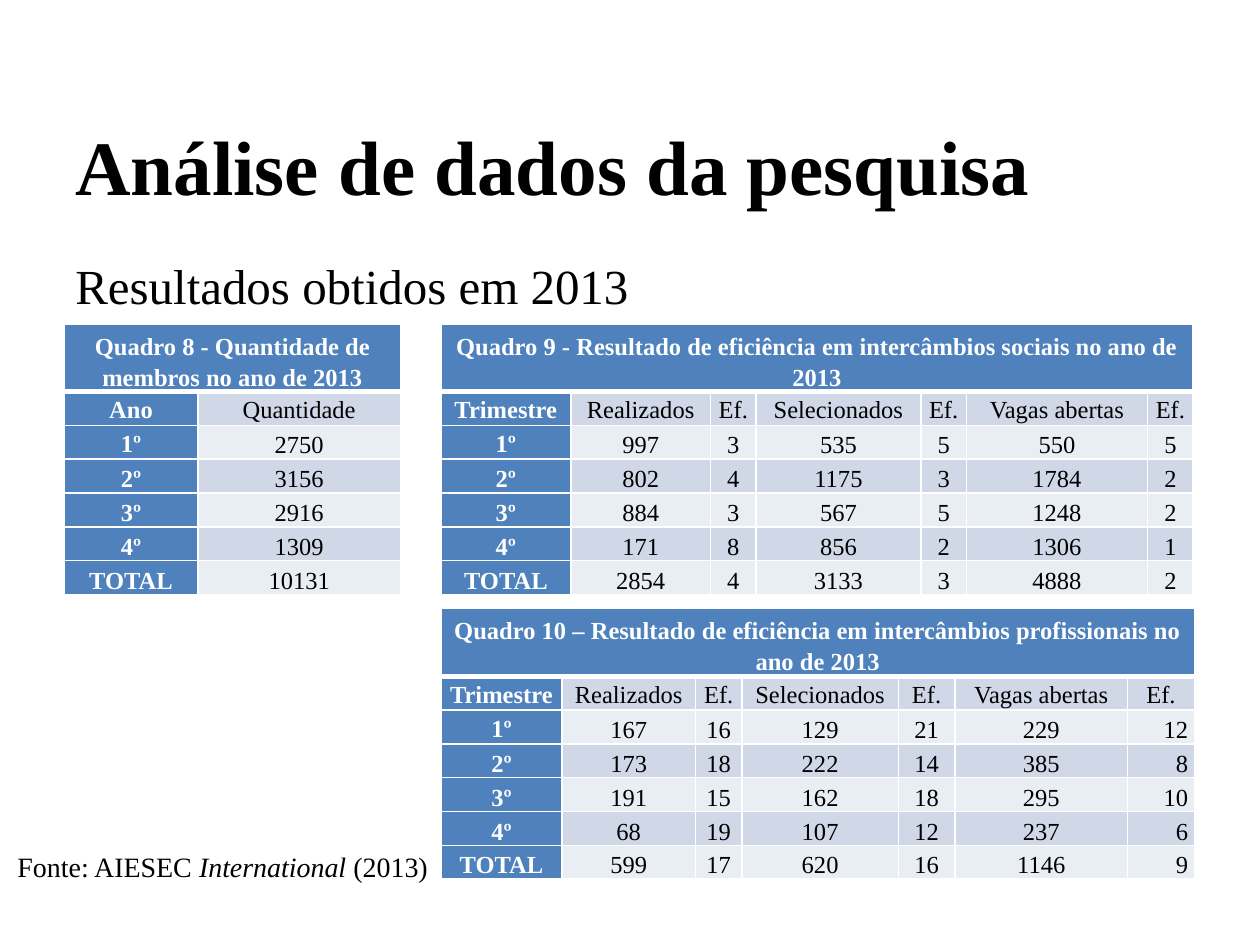
from dataclasses import dataclass

from lxml import etree
from pptx import Presentation
from pptx import util as u
from pptx.dml.color import RGBColor
from pptx.enum import text
from pptx.oxml.ns import qn

HUES = {"ink": "000000", "paper": "FFFFFF", "head": "4F81BD",
        "dark": "D0D8E8", "light": "E9EDF4"}
FACE = "Times New Roman"
LABELS = ["1º", "2º", "3º", "4º", "TOTAL"]
HEADS = ["Trimestre", "Realizados", "Ef.", "Selecionados", "Ef.",
         "Vagas abertas", "Ef."]


@dataclass
class Grid:
    title: str
    left: float
    top: float
    cols: list[float]
    heads: list[str]
    data: list[list[int]]
    flush: bool = False  # numbers of the last column sit right


GRIDS = [
    Grid("Quadro 8 - Quantidade de membros no ano de 2013", 0.51, 2.57,
         [1.06, 1.61], ["Ano", "Quantidade"],
         [[2750], [3156], [2916], [1309], [10131]]),
    Grid("Quadro 9 - Resultado de eficiência em intercâmbios sociais no ano de 2013",
         3.5, 2.57, [1.03, 1.11, 0.36, 1.31, 0.36, 1.44, 0.36], HEADS,
         [[997, 3, 535, 5, 550, 5],
          [802, 4, 1175, 3, 1784, 2],
          [884, 3, 567, 5, 1248, 2],
          [171, 8, 856, 2, 1306, 1],
          [2854, 4, 3133, 3, 4888, 2]]),
    Grid("Quadro 10 – Resultado de eficiência em intercâmbios profissionais no ano de 2013",
         3.5, 4.83, [0.96, 1.06, 0.37, 1.24, 0.45, 1.37, 0.53], HEADS,
         [[167, 16, 129, 21, 229, 12],
          [173, 18, 222, 14, 385, 8],
          [191, 15, 162, 18, 295, 10],
          [68, 19, 107, 12, 237, 6],
          [599, 17, 620, 16, 1146, 9]], flush=True),
]


def hue(name: str) -> RGBColor:
    return RGBColor.from_string(HUES[name])


def style(font, size: float, name: str, bold: bool = False) -> None:
    font.name, font.size, font.bold = FACE, u.Pt(size), bold
    font.color.rgb = hue(name)


def edge(cell, row: int) -> None:
    """Draw white cell borders, thick between the title and the heads."""
    props = cell._tc.get_or_add_tcPr()
    for i, side in enumerate("LRTB"):
        thick = (row, side) in ((0, "B"), (1, "T"))
        line = etree.Element(qn(f"a:ln{side}"), w=str(u.Pt(3 if thick else 1)))
        fill = etree.SubElement(line, qn("a:solidFill"))
        etree.SubElement(fill, qn("a:srgbClr"), val=HUES["paper"])
        props.insert(i, line)


def write(cell, words: str, row: int, col: int, right: bool) -> None:
    head = row == 0 or col == 0
    cell.fill.solid()
    cell.fill.fore_color.rgb = hue("head" if head else "dark" if row % 2 else "light")
    edge(cell, row)
    cell.margin_left = cell.margin_right = u.Inches(0.05)
    cell.margin_top = cell.margin_bottom = 0
    mid = row == 1 or (row, col) == (2, 0)
    cell.vertical_anchor = text.MSO_ANCHOR.MIDDLE if mid else text.MSO_ANCHOR.BOTTOM
    cell.text_frame.text = words
    para = cell.text_frame.paragraphs[0]
    para.alignment = text.PP_ALIGN.RIGHT if right else text.PP_ALIGN.CENTER
    para.line_spacing = 1.15
    style(para.font, 14, "paper" if head else "ink", head)
    for run in para.runs:
        style(run.font, 14, "paper" if head else "ink", head)


def draw(slide, grid: Grid) -> None:
    wide = len(grid.cols)
    rows = [[grid.title] + [""] * (wide - 1), grid.heads]
    rows += [[name, *map(str, nums)] for name, nums in zip(LABELS, grid.data)]
    frame = slide.shapes.add_table(
        len(rows), wide, u.Inches(grid.left), u.Inches(grid.top),
        u.Inches(sum(grid.cols)), u.Inches(2.15))
    table = frame.table
    table.first_col = True
    for col, size in zip(table.columns, grid.cols):
        col.width = u.Inches(size)
    for r, row in enumerate(rows):
        table.rows[r].height = u.Inches(0.21 if r else 0.22)
        for c, words in enumerate(row):
            right = grid.flush and r > 1 and c == wide - 1
            write(table.cell(r, c), words, r, c, right)
    table.cell(0, 0).merge(table.cell(0, wide - 1))
    frame.height = u.Inches(2.15)


def label(slide, box: tuple[float, ...], parts: list[str], size: float,
          bold: bool = False):
    """Add a text box whose every second part is italic."""
    frame = slide.shapes.add_textbox(*map(u.Inches, box)).text_frame
    frame.word_wrap = True
    for i, part in enumerate(parts):
        run = frame.paragraphs[0].add_run()
        run.text = part
        style(run.font, size, "ink", bold)
        run.font.italic = i % 2 == 1
    return frame


def main() -> None:
    deck = Presentation()
    deck.slide_width, deck.slide_height = u.Inches(10), u.Inches(7.5)
    slide = deck.slides.add_slide(deck.slide_layouts[6])
    title = label(slide, (0.5, 0.83, 9, 0.95), ["Análise de dados da pesquisa"], 44, True)
    title.vertical_anchor = text.MSO_ANCHOR.MIDDLE
    body = label(slide, (0.5, 1.94, 9, 4.87), ["Resultados obtidos em 2013"], 28)
    body.margin_top = u.Inches(0.09)
    for grid in GRIDS:
        draw(slide, grid)
    note = label(slide, (0.04, 6.69, 3.58, 0.37),
                 ["Fonte: AIESEC ", "International", " (2013)"], 16)
    note.word_wrap = False
    note.auto_size = text.MSO_AUTO_SIZE.SHAPE_TO_FIT_TEXT
    deck.save("out.pptx")


if __name__ == "__main__":
    main()
